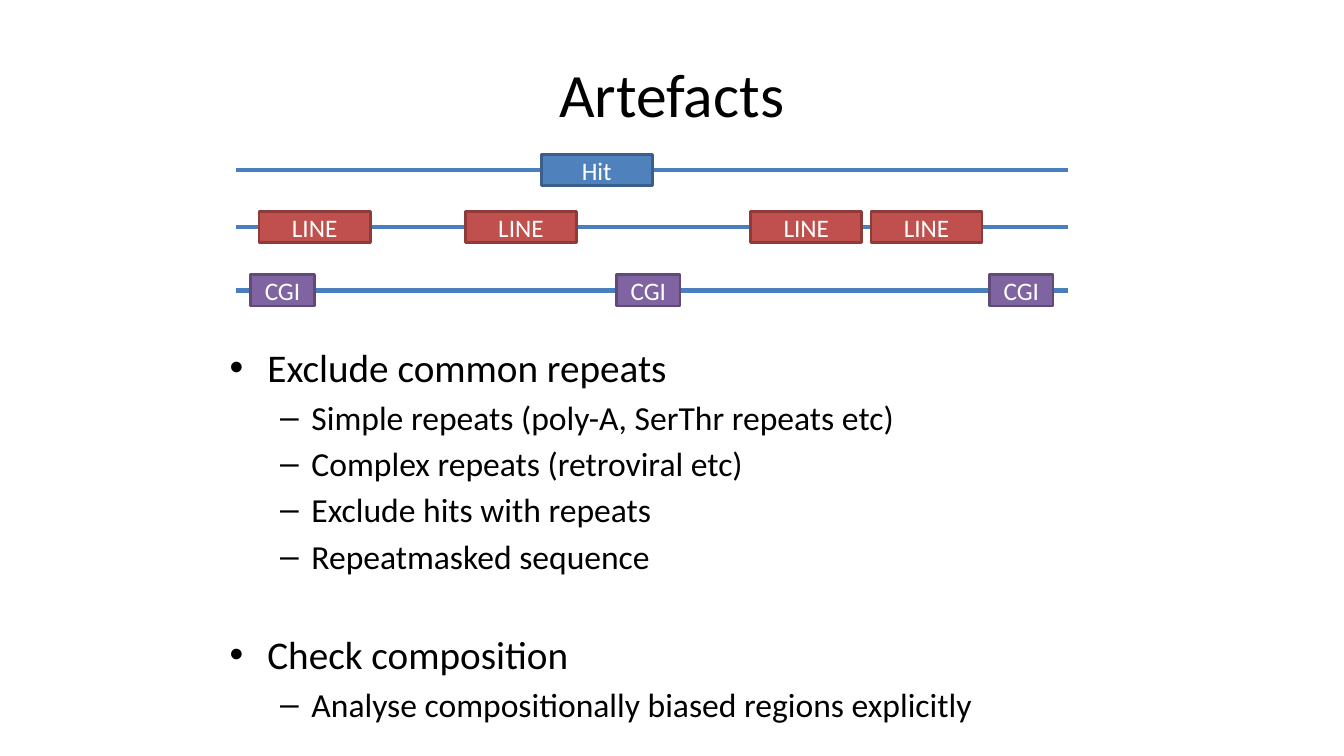
from lxml import etree
from pptx import Presentation
from pptx import util as u
from pptx.dml.color import RGBColor
from pptx.enum import shapes, text
from pptx.oxml.ns import qn

FONT = "Calibri"
C = {"black": "000000", "white": "FFFFFF", "track": "4B7EBC",
     "Hit": "4F81BD", "Hit edge": "3A5F8C",
     "LINE": "C0504D", "LINE edge": "8E3B39",
     "CGI": "8064A2", "CGI edge": "5F4A78"}

TITLE = "Artefacts"
TRACKS = [
    ("Hit", 4.29, 2.8, [13.64]),
    ("LINE", 5.72, 2.8, [6.53, 11.73, 18.92, 21.95]),
    ("CGI", 7.32, 1.6, [6.32, 15.54, 24.94]),
]
TRACK_LEFT, TRACK_RIGHT, BOX_H = 5.94, 26.92, 0.79

TOPICS = [
    ("Exclude common repeats", [
        "Simple repeats (poly-A, SerThr repeats etc)",
        "Complex repeats (retroviral etc)",
        "Exclude hits with repeats",
        "Repeatmasked sequence",
    ]),
    ("Check composition", [
        "Analyse compositionally biased regions explicitly",
    ]),
]
LEVELS = [("•", 0.95, 0.95, 28, 5), ("–", 2.06, 0.79, 24, 4.3)]
TOPIC_GAP = 39


def rgb(name):
    return RGBColor.from_string(C[name])


def write(p, content, size, color="black", align=text.PP_ALIGN.LEFT, before=0):
    p.alignment = align
    p.space_before = u.Pt(before)
    r = p.add_run()
    r.text = content
    r.font.name, r.font.size = FONT, u.Pt(size)
    r.font.color.rgb = rgb(color)


def bullet(p, level):
    mark, margin, hang, _, _ = LEVELS[level]
    p.level = level
    pPr = p._p.get_or_add_pPr()
    pPr.set("marL", str(u.Cm(margin)))
    pPr.set("indent", str(-u.Cm(hang)))
    etree.SubElement(pPr, qn("a:buFont")).set("typeface", "Arial")
    etree.SubElement(pPr, qn("a:buChar")).set("char", mark)


def add_track(parent, y):
    ln = parent.add_connector(shapes.MSO_CONNECTOR.STRAIGHT, u.Cm(TRACK_LEFT),
                              u.Cm(y), u.Cm(TRACK_RIGHT), u.Cm(y))
    ln.line.color.rgb, ln.line.width = rgb("track"), u.Pt(3)
    etree.SubElement(ln._element.spPr, qn("a:effectLst"))


def add_feature(parent, label, x, y, width):
    sp = parent.add_shape(shapes.MSO_SHAPE.RECTANGLE, u.Cm(x),
                          u.Cm(y - BOX_H / 2), u.Cm(width), u.Cm(BOX_H))
    sp.shadow.inherit = False
    sp.fill.solid()
    sp.fill.fore_color.rgb = rgb(label)
    sp.line.color.rgb, sp.line.width = rgb(label + " edge"), u.Pt(2)
    tf = sp.text_frame
    tf.margin_top = tf.margin_bottom = tf.margin_left = tf.margin_right = 0
    tf.vertical_anchor = text.MSO_ANCHOR.MIDDLE
    write(tf.paragraphs[0], label, 18, "white", text.PP_ALIGN.CENTER)


def main():
    prs = Presentation()
    prs.slide_width, prs.slide_height = u.Cm(33.87), u.Cm(19.05)
    s = prs.slides.add_slide(prs.slide_layouts[5])

    title = s.shapes.title
    title.left, title.top = u.Cm(1.69), u.Cm(0.76)
    title.width, title.height = u.Cm(30.48), u.Cm(3.18)
    title.text_frame.vertical_anchor = text.MSO_ANCHOR.MIDDLE
    write(title.text_frame.paragraphs[0], TITLE, 44, align=text.PP_ALIGN.CENTER)

    body = s.shapes.add_textbox(u.Cm(5.54), u.Cm(8.53), u.Cm(24.41), u.Cm(7.77))
    tf = body.text_frame
    tf.word_wrap = True
    for i, (topic, details) in enumerate(TOPICS):
        for level, line in [(0, topic)] + [(1, d) for d in details]:
            first = i == 0 and level == 0
            p = tf.paragraphs[0] if first else tf.add_paragraph()
            size, before = LEVELS[level][3:]
            if i and level == 0:
                before = TOPIC_GAP
            write(p, line, size, before=before)
            bullet(p, level)

    diagram = s.shapes.add_group_shape().shapes
    for label, y, width, lefts in TRACKS:
        add_track(diagram, y)
        for x in lefts:
            add_feature(diagram, label, x, y, width)

    prs.save("out.pptx")


if __name__ == "__main__":
    main()
